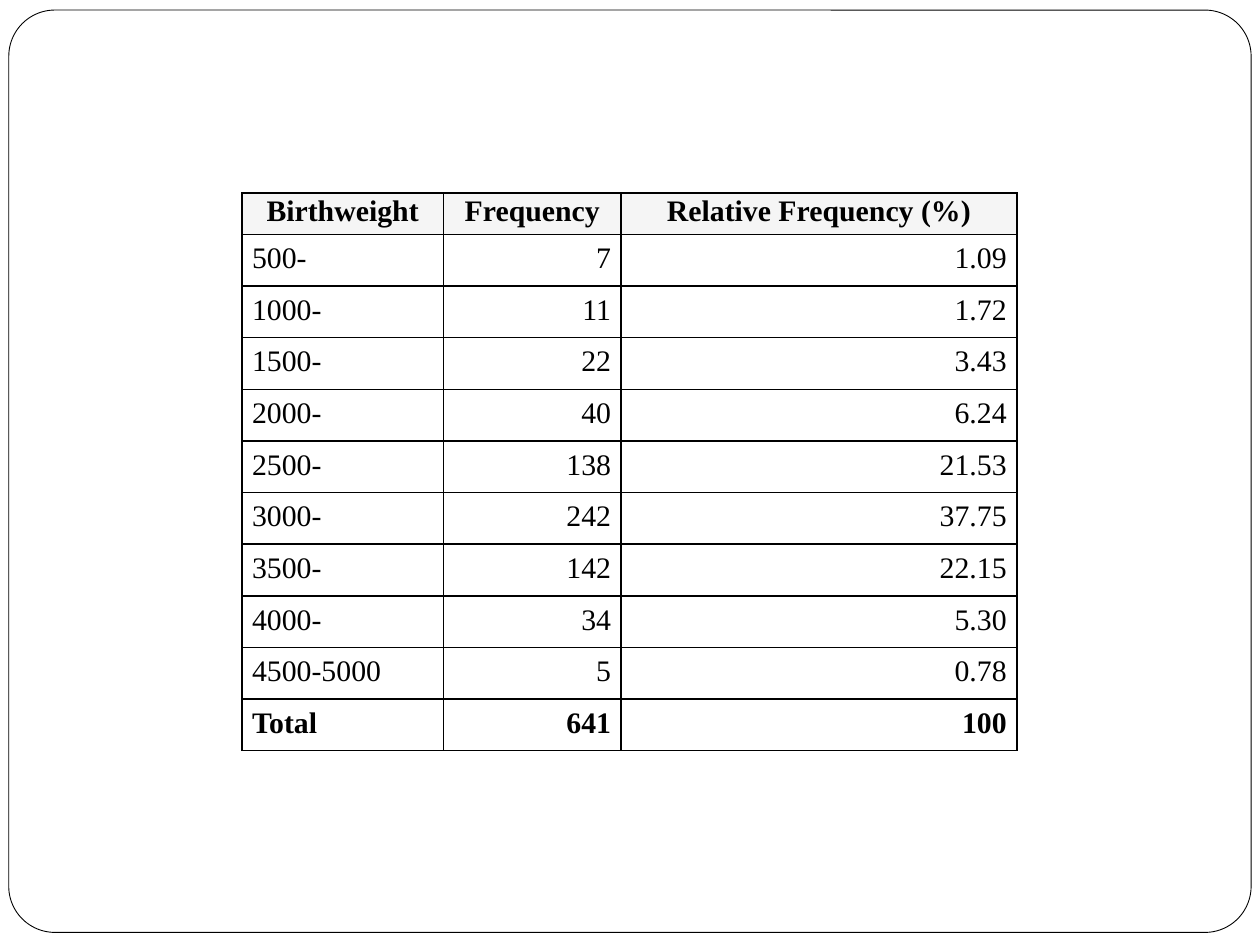
from dataclasses import dataclass

from lxml.etree import SubElement
from pptx import Presentation
from pptx.dml.color import RGBColor
from pptx.enum.shapes import MSO_SHAPE as Shape
from pptx.enum.text import PP_ALIGN as Align
from pptx.oxml.ns import qn
from pptx.util import Inches, Pt


@dataclass(frozen=True)
class Theme:
    font: str = "Times New Roman"
    text_size: float = 17
    ink: str = "000000"
    paper: str = "FFFFFF"
    header_fill: str = "F5F5F5"
    frame_width: float = 0.5
    border_width: float = 1


THEME = Theme()
HEADER = ("Birthweight", "Frequency", "Relative Frequency (%)")
BIRTHWEIGHTS = [
    ("500-", "7", "1.09"),
    ("1000-", "11", "1.72"),
    ("1500-", "22", "3.43"),
    ("2000-", "40", "6.24"),
    ("2500-", "138", "21.53"),
    ("3000-", "242", "37.75"),
    ("3500-", "142", "22.15"),
    ("4000-", "34", "5.30"),
    ("4500-5000", "5", "0.78"),
]
TOTAL = ("Total", "641", "100")
COLUMN_WIDTHS = (1.6, 1.41, 3.14)
HEADER_HEIGHT, ROW_HEIGHT = 0.33, 0.41


def color(value):
    return RGBColor.from_string(value)


def add_frame(page):
    frame = page.shapes.add_shape(
        Shape.ROUNDED_RECTANGLE, Inches(0.07), Inches(0.08), Inches(9.86), Inches(7.32))
    frame.adjustments[0] = 0.05
    frame.shadow.inherit = False
    frame.fill.solid()
    frame.fill.fore_color.rgb = color(THEME.paper)
    frame.line.color.rgb = color(THEME.ink)
    frame.line.width = Pt(THEME.frame_width)


def set_borders(cell):
    """Draw all four cell edges; call before the fill, which must follow them in the XML."""
    properties = cell._tc.get_or_add_tcPr()
    for side in ("a:lnL", "a:lnR", "a:lnT", "a:lnB"):
        line = SubElement(properties, qn(side), w=str(Pt(THEME.border_width)))
        fill = SubElement(line, qn("a:solidFill"))
        SubElement(fill, qn("a:srgbClr"), val=THEME.ink)


def fill_cell(cell, text, align, bold, fill, inset_x, inset_y):
    set_borders(cell)
    cell.fill.solid()
    cell.fill.fore_color.rgb = color(fill)
    cell.margin_left = cell.margin_right = Inches(inset_x)
    cell.margin_top = cell.margin_bottom = Inches(inset_y)
    cell.text = text
    para = cell.text_frame.paragraphs[0]
    para.alignment = align
    para.font.name = THEME.font
    para.font.size = Pt(THEME.text_size)
    para.font.bold = bold
    para.font.color.rgb = color(THEME.ink)


def add_frequency_table(page):
    rows = [HEADER, *BIRTHWEIGHTS, TOTAL]
    height = HEADER_HEIGHT + ROW_HEIGHT * (len(rows) - 1)
    table = page.shapes.add_table(
        len(rows), len(HEADER), Inches(1.92), Inches(1.53),
        Inches(sum(COLUMN_WIDTHS)), Inches(height)).table
    for column, width in zip(table.columns, COLUMN_WIDTHS):
        column.width = Inches(width)
    for row_index, values in enumerate(rows):
        is_header = row_index == 0
        table.rows[row_index].height = Inches(HEADER_HEIGHT if is_header else ROW_HEIGHT)
        for column_index, text in enumerate(values):
            cell = table.cell(row_index, column_index)
            if is_header:
                fill_cell(cell, text, Align.CENTER, True, THEME.header_fill, 0.02, 0.02)
            else:
                align = Align.LEFT if column_index == 0 else Align.RIGHT
                fill_cell(cell, text, align, values is TOTAL, THEME.paper, 0.08, 0.06)


def main():
    deck = Presentation()
    deck.slide_width, deck.slide_height = Inches(10), Inches(7.5)
    page = deck.slides.add_slide(deck.slide_layouts[6])
    add_frame(page)
    add_frequency_table(page)
    deck.save("out.pptx")


if __name__ == "__main__":
    main()
